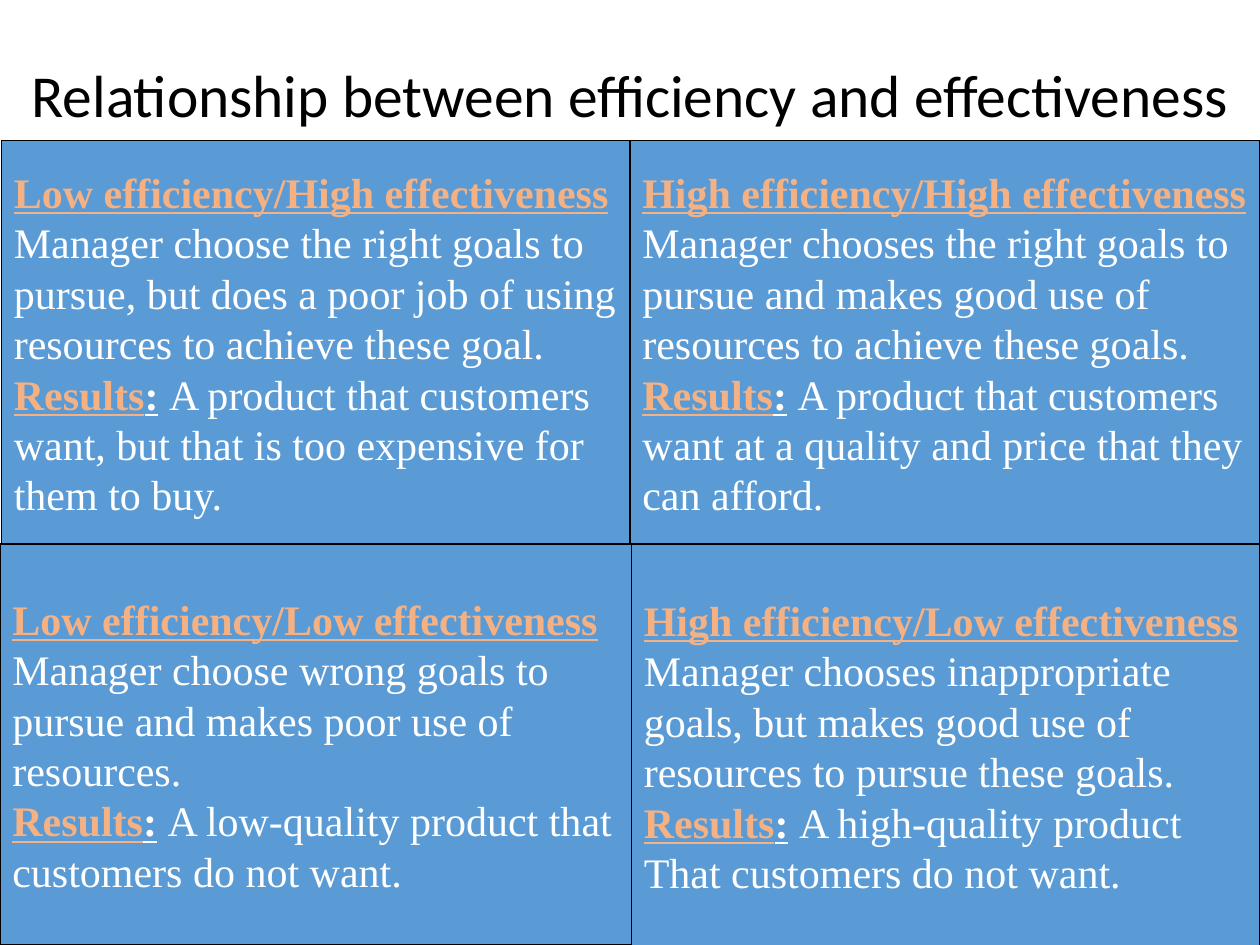
"""Build a slide with a two-by-two grid relating efficiency and effectiveness."""
from pptx import Presentation
from pptx.dml.color import RGBColor
from pptx.enum.shapes import MSO_SHAPE
from pptx.enum.text import MSO_ANCHOR, PP_ALIGN
from pptx.util import Cm, Pt


def paint(target, color):
    target.rgb = RGBColor.from_string(color)


def add_line(frame, index, color, font_name="Times New Roman", size=24):
    line = frame.paragraphs[0] if index == 0 else frame.add_paragraph()
    line.alignment = PP_ALIGN.LEFT
    line.font.name = font_name
    line.font.size = Pt(size)
    paint(line.font.color, color)
    return line


ACCENT, WHITE, BLACK, BLUE = "F4B183", "FFFFFF", "000000", "5B9BD5"
RESULTS = "Results: "

quadrants = [
    ((0.03, 2.84, 12.7, 8.15), [
        "Low efficiency/High effectiveness",
        "Manager choose the right goals to",
        "pursue, but does a poor job of using",
        "resources to achieve these goal.",
        "Results: A product that customers",
        "want, but that is too expensive for",
        "them to buy."]),
    ((12.7, 2.84, 12.7, 8.15), [
        "High efficiency/High effectiveness",
        "Manager chooses the right goals to",
        "pursue and makes good use of",
        "resources to achieve these goals.",
        "Results: A product that customers",
        "want at a quality and price that they",
        "can afford."]),
    ((0, 10.97, 12.73, 8.08), [
        "Low efficiency/Low effectiveness",
        "Manager choose wrong goals to",
        "pursue and makes poor use of",
        "resources.",
        "Results: A low-quality product that",
        "customers do not want."]),
    ((12.73, 10.97, 12.67, 8.13), [
        "High efficiency/Low effectiveness",
        "Manager chooses inappropriate",
        "goals, but makes good use of",
        "resources to pursue these goals.",
        "Results: A high-quality product",
        "That customers do not want."]),
]

presentation = Presentation()
presentation.slide_width = Cm(25.4)
presentation.slide_height = Cm(19.05)
slide = presentation.slides.add_slide(presentation.slide_layouts[6])

for bounds, lines in quadrants:
    quadrant = slide.shapes.add_shape(
        MSO_SHAPE.FLOWCHART_PROCESS, *[Cm(length) for length in bounds])
    quadrant.shadow.inherit = False
    quadrant.fill.solid()
    paint(quadrant.fill.fore_color, BLUE)
    paint(quadrant.line.color, BLACK)
    quadrant.line.width = Pt(0.75)
    frame = quadrant.text_frame
    frame.word_wrap = False
    frame.vertical_anchor = MSO_ANCHOR.MIDDLE
    for index, wording in enumerate(lines):
        line = add_line(frame, index, ACCENT if index == 0 else WHITE)
        if wording.startswith(RESULTS):
            for part, color, bold, underline in [
                    ("Results", ACCENT, True, True),
                    (":", WHITE, True, True),
                    (" ", WHITE, True, False),
                    (wording.removeprefix(RESULTS), WHITE, False, False)]:
                run = line.add_run()
                run.text = part
                run.font.bold = bold
                run.font.underline = underline
                paint(run.font.color, color)
        else:
            line.add_run().text = wording
            line.font.bold = line.font.underline = index == 0

title = slide.shapes.add_textbox(Cm(0), Cm(0.43), Cm(25.4), Cm(3.1))
title.text_frame.word_wrap = True
title.text_frame.vertical_anchor = MSO_ANCHOR.MIDDLE
heading = add_line(title.text_frame, 0, BLACK, "Calibri", 34)
heading.alignment = PP_ALIGN.CENTER
heading.line_spacing = 0.9
heading.add_run().text = "Relationship between efficiency and effectiveness"

presentation.save("out.pptx")
